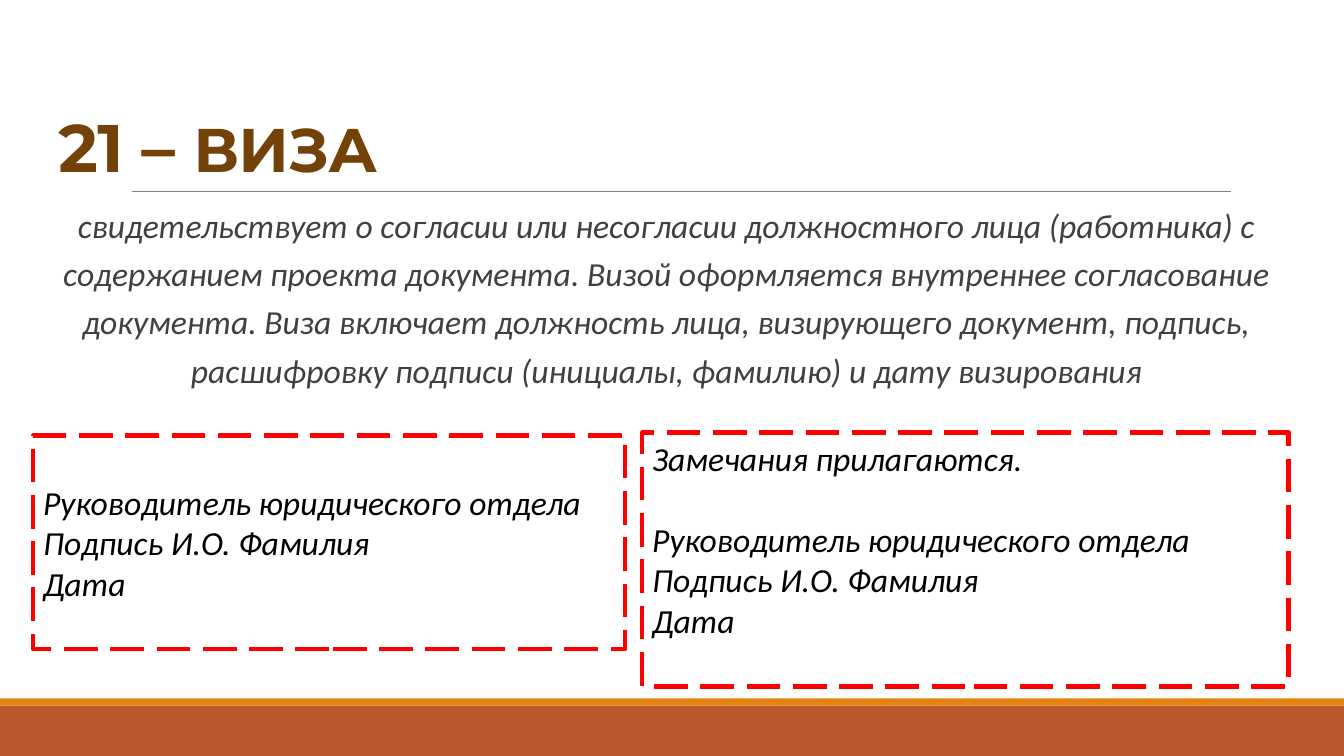
from dataclasses import dataclass

from pptx import Presentation
from pptx.dml.color import RGBColor as RGB
from pptx.enum.dml import MSO_LINE
from pptx.enum.shapes import MSO_CONNECTOR, MSO_SHAPE
from pptx.enum.text import MSO_ANCHOR as ANCHOR, MSO_AUTO_SIZE as AUTOSIZE, PP_ALIGN as ALIGN
from pptx.oxml.ns import qn
from pptx.util import Inches, Pt


@dataclass(frozen=True)
class Theme:
    rust = RGB(0xBD, 0x58, 0x2C)
    orange = RGB(0xE4, 0x83, 0x12)
    brown = RGB(0x72, 0x42, 0x09)
    rule = RGB(0x80, 0x80, 0x80)
    body = RGB(0x40, 0x40, 0x40)
    ink = RGB(0, 0, 0)
    frame = RGB(0xFF, 0, 0)
    head_font = "Montserrat"
    body_font = "Calibri"
    number_size = Pt(48)
    title_size = Pt(44)
    text_size = Pt(24)
    blank_line = Pt(29.3)


T = Theme()


def add_rect(x, y, w, h):
    sp = s.shapes.add_shape(MSO_SHAPE.RECTANGLE, Inches(x), Inches(y), Inches(w), Inches(h))
    sp.shadow.inherit = False
    return sp


def style_text(p, color, align):
    p.alignment = align
    p.font.name, p.font.size = T.body_font, T.text_size
    p.font.italic = True
    p.font.color.rgb = color


prs = Presentation()
prs.slide_width, prs.slide_height = Inches(13.33), Inches(7.5)
s = prs.slides.add_slide(prs.slide_layouts[5])

# Footer bands and the rule under the title
for y, h, color in [(7, 0.5, T.rust), (6.93, 0.07, T.orange)]:
    band = add_rect(0, y, 13.33, h)
    band.fill.solid()
    band.fill.fore_color.rgb = color
    band.line.fill.background()

rule = s.shapes.add_connector(
    MSO_CONNECTOR.STRAIGHT, Inches(1.31), Inches(1.9), Inches(12.21), Inches(1.9))
rule.line.color.rgb = T.rule
rule.line.width = Pt(0.5)
spPr = rule._element.spPr
spPr.append(spPr.makeelement(qn("a:effectLst"), {}))

# Title
title = s.shapes.title
title.left, title.top = Inches(0.48), Inches(0.31)
title.width, title.height = Inches(12.3), Inches(1.59)
tf = title.text_frame
tf.auto_size = AUTOSIZE.NONE
tf.vertical_anchor = ANCHOR.BOTTOM
p = tf.paragraphs[0]
p.alignment, p.line_spacing = ALIGN.LEFT, 0.85
p.font.name, p.font.bold = T.head_font, True
p.font.color.rgb = T.brown
for text, size in [("21 – ", T.number_size), ("ВИЗА", T.title_size)]:
    r = p.add_run()
    r.text, r.font.size = text, size
    r.font._element.set("spc", "-50")

# Definition
definition = s.shapes.add_textbox(Inches(0.33), Inches(1.9), Inches(12.46), Inches(2.08))
tf = definition.text_frame
tf.word_wrap = True
tf.margin_left, tf.margin_right = Inches(0.1), 0
p = tf.paragraphs[0]
p.text = (
    "свидетельствует о согласии или несогласии должностного лица (работника) "
    "с содержанием проекта документа. Визой оформляется внутреннее согласование "
    "документа. Виза включает должность лица, визирующего документ, подпись, "
    "расшифровку подписи (инициалы, фамилию) и дату визирования"
)
p.line_spacing = 1.2
style_text(p, T.body, ALIGN.CENTER)

# Sample visas: without and with remarks
signature = ["Руководитель юридического отдела", "Подпись И.О. Фамилия", "Дата"]
remark = "Замечания прилагаются."
visas = [
    ((0.33, 4.32, 5.87, 2.12), ANCHOR.MIDDLE, signature),
    ((6.37, 4.29, 6.41, 2.52), ANCHOR.TOP, [remark] + signature),
]
for place, anchor, lines in visas:
    box = add_rect(*place)
    box.fill.background()
    box.line.color.rgb = T.frame
    box.line.width = Pt(3)
    box.line.dash_style = MSO_LINE.LONG_DASH
    tf = box.text_frame
    tf.word_wrap = True
    tf.vertical_anchor = anchor
    for i, text in enumerate(lines):
        p = tf.paragraphs[0] if i == 0 else tf.add_paragraph()
        p.text = text
        style_text(p, T.ink, ALIGN.LEFT)
        if i and lines[i - 1] == remark:
            p.space_before = T.blank_line

prs.save("out.pptx")
